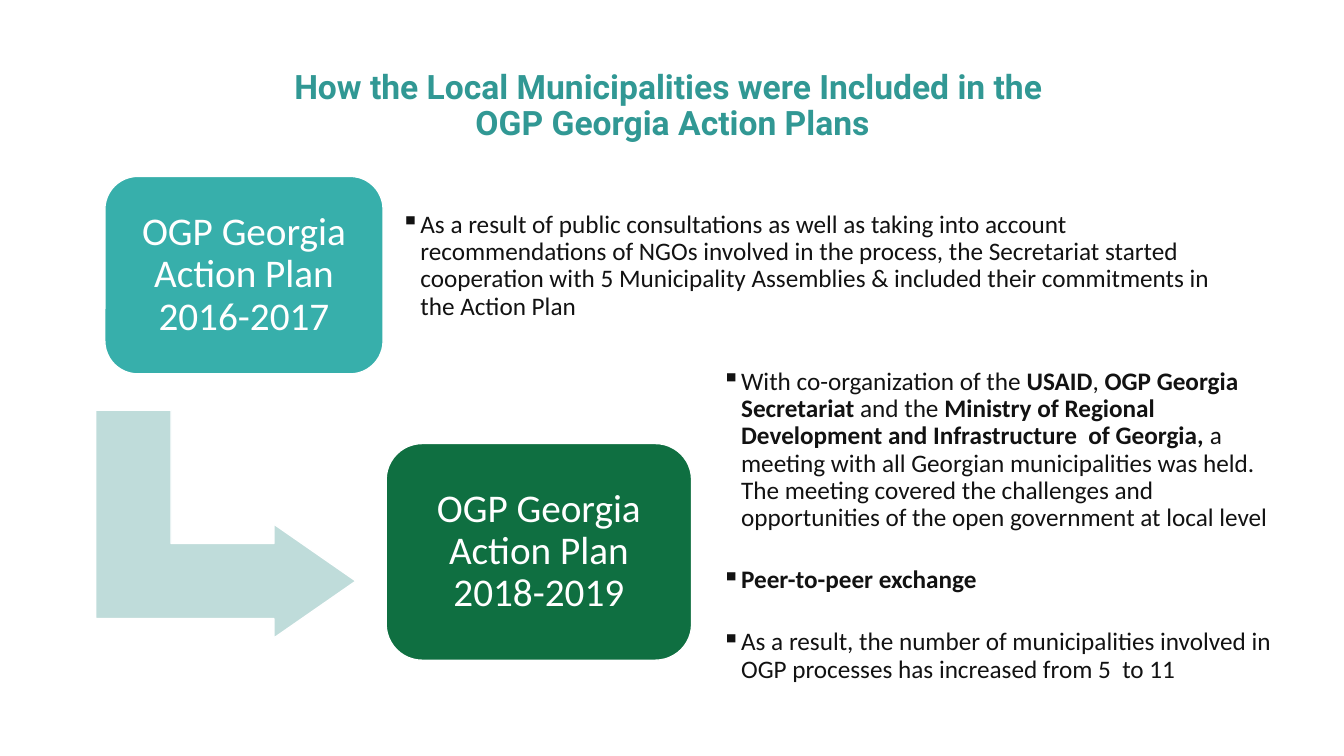
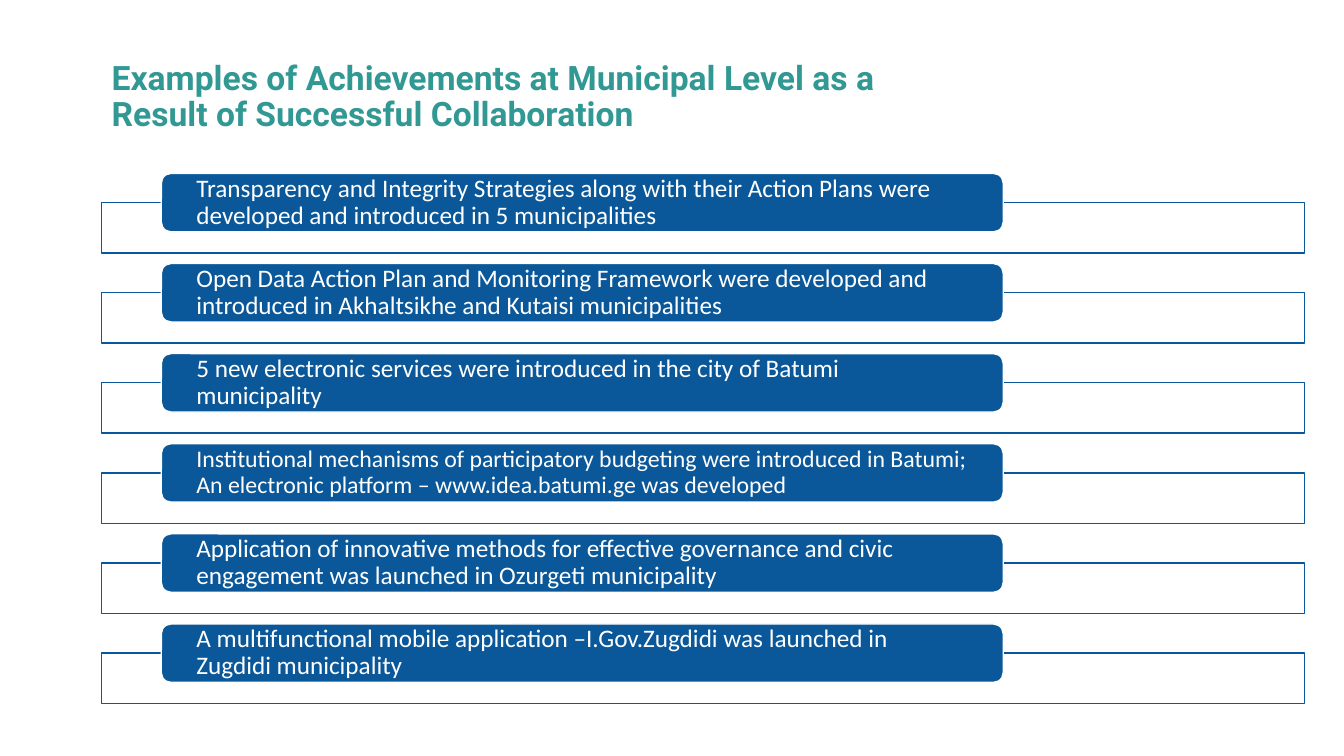
from typing import NamedTuple, Optional

from lxml import etree
from pptx import Presentation
from pptx.dml.color import RGBColor
from pptx.enum import shapes, text
from pptx.oxml import ns
from pptx.util import Inches, Pt

WHITE = RGBColor(0xFF, 0xFF, 0xFF)
INK = RGBColor(0x12, 0x12, 0x12)
TITLE_TEAL = RGBColor(0x31, 0x98, 0x94)
PLAN_TEAL = RGBColor(0x37, 0xAF, 0xAB)
PLAN_GREEN = RGBColor(0x0F, 0x6F, 0x41)
ARROW_TEAL = RGBColor(0xBF, 0xDC, 0xDA)
BLUE = RGBColor(0x0A, 0x58, 0x99)

TITLE_FONT = "Roboto"
BODY_FONT = "Calibri"
LINE_SPACING = 0.9
BULLET_INDENT = Inches(0.19)
BULLET_GAP = Pt(25)

FIRST_ROW_TOP, LAST_ROW_TOP = 2.01, 6.48
BAR_RISE = 0.29


class Box(NamedTuple):
    left: float
    top: float
    width: float
    height: float

    def lengths(self):
        return [Inches(value) for value in self]


class Span(NamedTuple):
    text: str
    bold: bool = False


class Plan(NamedTuple):
    label: str
    color: RGBColor
    card: Box
    bullet_area: Box
    bullets: list[list[Span]]


class Achievement(NamedTuple):
    text: str
    size: int = 18


PLANS = [
    Plan(
        "OGP Georgia Action Plan 2016-2017", PLAN_TEAL,
        Box(1.04, 1.75, 2.76, 1.96), Box(3.91, 2, 8.3, 1.28),
        [[Span("As a result of public consultations as well as taking into account "
               "recommendations of NGOs involved in the process, the Secretariat started "
               "cooperation with 5 Municipality Assemblies & included their commitments "
               "in the Action Plan")]],
    ),
    Plan(
        "OGP Georgia Action Plan 2018-2019", PLAN_GREEN,
        Box(3.83, 4.4, 3.03, 2.15), Box(7.09, 4.14, 5.69, 2.16),
        [
            [Span("With co-organization of the "), Span("USAID", True), Span(", "),
             Span("OGP Georgia Secretariat", True), Span(" and the "),
             Span("Ministry of Regional Development and Infrastructure  of Georgia, ", True),
             Span("a meeting with all Georgian municipalities was held. The meeting covered "
                  "the challenges and opportunities of the open government at local level")],
            [Span("Peer-to-peer exchange", True)],
            [Span("As a result, the number of municipalities involved in OGP processes "
                  "has increased from 5  to 11")],
        ],
    ),
]

ACHIEVEMENTS = [
    Achievement("Transparency and Integrity Strategies along with their Action Plans were "
                "developed and introduced in 5 municipalities"),
    Achievement("Open Data Action Plan and Monitoring Framework were developed and "
                "introduced in Akhaltsikhe and Kutaisi municipalities"),
    Achievement("5 new electronic services were introduced in the city of Batumi municipality"),
    Achievement("Institutional mechanisms of participatory budgeting were introduced in Batumi; "
                "An electronic platform – www.idea.batumi.ge was developed", 17),
    Achievement("Application of innovative methods for effective governance and civic "
                "engagement was launched in Ozurgeti municipality"),
    Achievement("A multifunctional mobile application –I.Gov.Zugdidi was launched in "
                "Zugdidi municipality"),
]


def style_paragraph(paragraph, size: int, color: RGBColor, font_name: str = BODY_FONT,
                    bold: Optional[bool] = None, align=text.PP_ALIGN.LEFT) -> None:
    paragraph.alignment = align
    paragraph.line_spacing = LINE_SPACING
    font = paragraph.font
    font.name, font.size, font.bold = font_name, Pt(size), bold
    font.color.rgb = color


def prepare_frame(frame, side: float, vertical: float) -> None:
    """Wrap the text, centre it vertically and set margins in inches."""
    frame.word_wrap = True
    frame.vertical_anchor = text.MSO_ANCHOR.MIDDLE
    frame.margin_left = frame.margin_right = Inches(side)
    frame.margin_top = frame.margin_bottom = Inches(vertical)


def add_bullet(paragraph) -> None:
    properties = paragraph._p.get_or_add_pPr()
    properties.set("marL", str(BULLET_INDENT))
    properties.set("indent", str(-BULLET_INDENT))
    etree.SubElement(properties, ns.qn("a:buChar")).set("char", "▪")


def add_title(slide, box: Box, title: str, align) -> None:
    frame = slide.shapes.add_textbox(*box.lengths()).text_frame
    prepare_frame(frame, 0.1, 0.05)
    paragraph = frame.paragraphs[0]
    paragraph.text = title
    style_paragraph(paragraph, 24, TITLE_TEAL, TITLE_FONT, True, align)


def add_filled_shape(slide, kind, box: Box, fill: RGBColor, line: RGBColor = WHITE):
    shape = slide.shapes.add_shape(kind, *box.lengths())
    shape.shadow.inherit = False
    shape.fill.solid()
    shape.fill.fore_color.rgb = fill
    shape.line.color.rgb = line
    shape.line.width = Pt(1)
    return shape


def add_card(slide, box: Box, fill: RGBColor, label: str, size: int,
             side: float, vertical: float, align) -> None:
    """Draw a rounded rectangle with a white label."""
    card = add_filled_shape(slide, shapes.MSO_SHAPE.ROUNDED_RECTANGLE, box, fill)
    prepare_frame(card.text_frame, side, vertical)
    paragraph = card.text_frame.paragraphs[0]
    paragraph.text = label
    style_paragraph(paragraph, size, WHITE, align=align)


def add_bullet_list(slide, box: Box, bullets: list[list[Span]]) -> None:
    frame = slide.shapes.add_textbox(*box.lengths()).text_frame
    prepare_frame(frame, 0.07, 0.07)
    for index, spans in enumerate(bullets):
        paragraph = frame.add_paragraph() if index else frame.paragraphs[0]
        add_bullet(paragraph)
        style_paragraph(paragraph, 18, INK)
        if index:
            paragraph.space_before = BULLET_GAP
        for span in spans:
            run = paragraph.add_run()
            run.text = span.text
            run.font.bold = span.bold


def build_plans_slide(slide) -> None:
    add_title(slide, Box(1.92, 0.37, 9.5, 1.37),
              "How the Local Municipalities were Included in the \vOGP Georgia Action Plans",
              text.PP_ALIGN.CENTER)
    arrow = add_filled_shape(slide, shapes.MSO_SHAPE.BENT_UP_ARROW,
                             Box(1.11, 3.91, 2.26, 2.58), ARROW_TEAL)
    arrow.rotation = 90
    for index, value in enumerate((0.33, 0.25, 0.36)):
        arrow.adjustments[index] = value
    for plan in PLANS:
        add_card(slide, plan.card, plan.color, plan.label, 28, 0.12, 0.12,
                 text.PP_ALIGN.CENTER)
        add_bullet_list(slide, plan.bullet_area, plan.bullets)


def build_achievements_slide(slide) -> None:
    add_title(slide, Box(1.01, 0.24, 12.23, 1.45),
              "Examples of Achievements at Municipal Level as a "
              "\vResult of Successful Collaboration",
              text.PP_ALIGN.LEFT)
    pitch = (LAST_ROW_TOP - FIRST_ROW_TOP) / (len(ACHIEVEMENTS) - 1)
    for index, achievement in enumerate(ACHIEVEMENTS):
        top = FIRST_ROW_TOP + index * pitch
        add_filled_shape(slide, shapes.MSO_SHAPE.RECTANGLE,
                         Box(1.01, top, 11.93, 0.5), WHITE, BLUE)
        add_card(slide, Box(1.6, top - BAR_RISE, 8.35, 0.58), BLUE, achievement.text,
                 achievement.size, 0.32, 0, text.PP_ALIGN.LEFT)


def main() -> None:
    presentation = Presentation()
    presentation.slide_width = Inches(13.33)
    presentation.slide_height = Inches(7.5)
    blank_layout = presentation.slide_layouts[6]
    for build in (build_plans_slide, build_achievements_slide):
        build(presentation.slides.add_slide(blank_layout))
    presentation.save("out.pptx")


if __name__ == "__main__":
    main()
